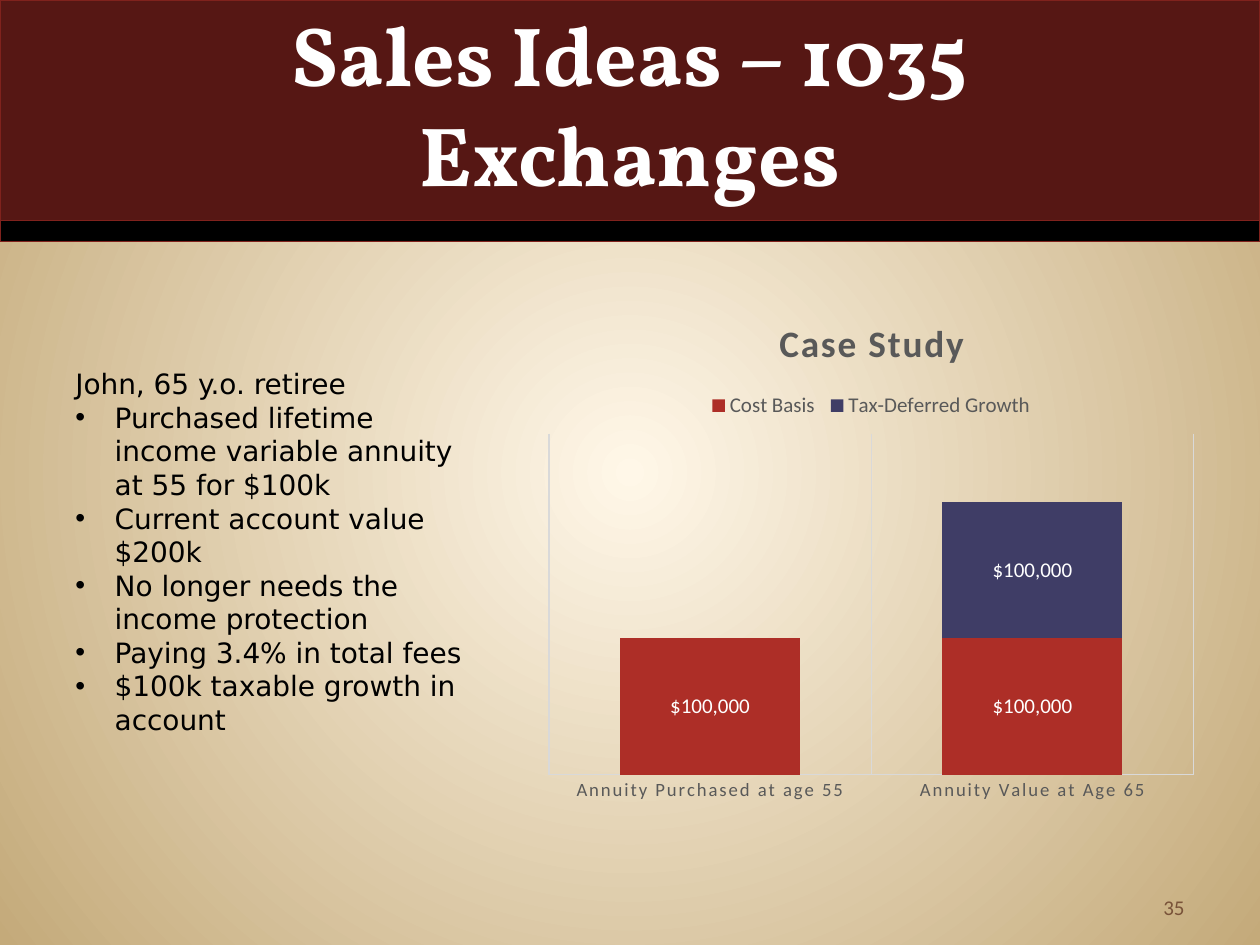
from lxml import etree
from pptx import Presentation
from pptx.chart.data import CategoryChartData
from pptx.dml.color import RGBColor
from pptx.enum.chart import XL_CHART_TYPE, XL_LABEL_POSITION, XL_LEGEND_POSITION, XL_TICK_MARK
from pptx.enum.shapes import MSO_SHAPE
from pptx.enum.text import MSO_ANCHOR, PP_ALIGN
from pptx.oxml import parse_xml
from pptx.oxml.ns import nsdecls, qn
from pptx.util import Pt

COLUMN_STACKED = XL_CHART_TYPE.COLUMN_STACKED
LABEL_CENTER = XL_LABEL_POSITION.CENTER
LEGEND_TOP = XL_LEGEND_POSITION.TOP
TICK_NONE = XL_TICK_MARK.NONE
RECTANGLE = MSO_SHAPE.RECTANGLE
TOP, BOTTOM = MSO_ANCHOR.TOP, MSO_ANCHOR.BOTTOM
LEFT, CENTER, RIGHT = PP_ALIGN.LEFT, PP_ALIGN.CENTER, PP_ALIGN.RIGHT

BLACK = RGBColor(0x00, 0x00, 0x00)
WHITE = RGBColor(0xFF, 0xFF, 0xFF)
CREAM = RGBColor(0xFF, 0xF7, 0xE8)
TAN = RGBColor(0xC4, 0xAA, 0x7A)
MAROON = RGBColor(0x56, 0x17, 0x14)
BAND_EDGE = RGBColor(0x80, 0x22, 0x1D)
BROWN = RGBColor(0x79, 0x53, 0x39)
GRAY = RGBColor(0x59, 0x59, 0x59)
LIGHT_GRAY = RGBColor(0xD9, 0xD9, 0xD9)
RED = RGBColor(0xAD, 0x2E, 0x27)
INDIGO = RGBColor(0x3F, 0x3D, 0x66)

DOLLARS = '"$"#,##0'
LETTER_SPACING = "120"
BULLET_INDENT = Pt(22.5)
CASE_FACTS = [
    "Purchased lifetime income variable annuity at 55 for $100k",
    "Current account value $200k",
    "No longer needs the income protection",
    "Paying 3.4% in total fees",
    "$100k taxable growth in account",
]
CATEGORIES = ["Annuity Purchased at age 55", "Annuity Value at Age 65"]
SERIES = [
    ("Cost Basis", (100000, 100000), RED),
    ("Tax-Deferred Growth", (None, 100000), INDIGO),
]


def format_font(font, color, **values):
    for name, value in values.items():
        setattr(font, name, value)
    font.color.rgb = color


def format_line(line, color, width):
    line.color.rgb = color
    line.width = Pt(width)


def set_background(slide):
    """Radial gradient, light in the middle of the slide."""
    fill = slide.background.fill
    fill.gradient()
    for stop, color, position in zip(fill.gradient_stops, (CREAM, TAN), (0, 1)):
        stop.color.rgb = color
        stop.position = position
    gradient = slide.element.xpath(".//p:bg//a:gradFill")[0]
    linear = gradient.find(qn("a:lin"))
    circle = etree.Element(qn("a:path"), path="circle")
    etree.SubElement(circle, qn("a:fillToRect"), l="50000", t="50000", r="50000", b="50000")
    gradient.replace(linear, circle)


def add_band(slide, top, height, color):
    shape = slide.shapes.add_shape(RECTANGLE, 0, Pt(top), Pt(720), Pt(height))
    shape.shadow.inherit = False
    shape.fill.solid()
    shape.fill.fore_color.rgb = color
    format_line(shape.line, BAND_EDGE, 1)


def add_text(slide, box, lines, color, anchor, alignment, **font_values):
    """Add a text box and return its paragraphs."""
    frame = slide.shapes.add_textbox(*map(Pt, box)).text_frame
    frame.word_wrap = True
    frame.vertical_anchor = anchor
    frame.text = "\n".join(lines)
    for paragraph in frame.paragraphs:
        paragraph.alignment = alignment
        format_font(paragraph.runs[0].font, color, **font_values)
    return frame.paragraphs


def add_bullet(paragraph):
    properties = paragraph._p.get_or_add_pPr()
    properties.set("marL", str(BULLET_INDENT))
    properties.set("indent", str(-BULLET_INDENT))
    etree.SubElement(properties, qn("a:buFont"), typeface="Arial")
    etree.SubElement(properties, qn("a:buChar"), char="•")


def place_chart_part(chart, tag, index, **percents):
    """Give a chart part a fixed place, in percent of the chart area."""
    part = chart.element.xpath(f".//{tag}")[0]
    for layout in part.findall(qn("c:layout")):
        part.remove(layout)
    target = '<c:layoutTarget val="inner"/>' if tag == "c:plotArea" else ""
    modes = "".join(f'<c:{name}Mode val="edge"/>' for name in "xy")
    values = "".join(f'<c:{name} val="{value / 100:.3f}"/>' for name, value in percents.items())
    part.insert(index, parse_xml(
        f"<c:layout {nsdecls('c')}><c:manualLayout>{target}{modes}{values}"
        "</c:manualLayout></c:layout>"))


def format_axes(chart):
    chart.value_axis.minimum_scale = 0
    chart.value_axis.maximum_scale = 250000
    chart.value_axis.has_major_gridlines = False
    chart.value_axis.visible = False
    axis = chart.category_axis
    axis.major_tick_mark = axis.minor_tick_mark = TICK_NONE
    axis.has_major_gridlines = True
    for line in (axis.format.line, axis.major_gridlines.format.line):
        format_line(line, LIGHT_GRAY, 0.75)
    format_font(axis.tick_labels.font, GRAY, size=Pt(10.64), name="Calibri")
    chart.element.xpath(".//c:catAx//a:defRPr")[0].set("spc", LETTER_SPACING)


def format_series(plot):
    plot.gap_width = 79
    plot.overlap = 100
    plot.vary_by_categories = False
    for series, (_, _, color) in zip(plot.series, SERIES):
        series.format.fill.solid()
        series.format.fill.fore_color.rgb = color
        labels = series.data_labels
        label_values = {
            "show_value": True,
            "position": LABEL_CENTER,
            "number_format": DOLLARS,
            "number_format_is_linked": False,
        }
        for name, value in label_values.items():
            setattr(labels, name, value)
        format_font(labels.font, WHITE, size=Pt(12), name="Calibri")


def add_case_chart(slide):
    data = CategoryChartData()
    data.categories = CATEGORIES
    for name, values, _ in SERIES:
        data.add_series(name, values)
    chart = slide.shapes.add_chart(
        COLUMN_STACKED, Pt(306), Pt(167.76), Pt(383.76), Pt(296.64), data).chart
    format_font(chart.font, BLACK, size=Pt(10), name="Calibri")

    chart.has_title = True
    title = chart.chart_title
    title.include_in_layout = False
    title.text_frame.text = "Case Study"
    font = title.text_frame.paragraphs[0].runs[0].font
    format_font(font, GRAY, size=Pt(21.28), bold=True, name="Calibri")
    chart.element.xpath(".//c:title//a:r/a:rPr")[0].set("spc", LETTER_SPACING)

    chart.has_legend = True
    chart.legend.position = LEGEND_TOP
    chart.legend.include_in_layout = False
    format_font(chart.legend.font, GRAY, size=Pt(12), name="Calibri")

    format_axes(chart)
    format_series(chart.plots[0])
    place_chart_part(chart, "c:title", 1, x=35.3, y=3.4)
    place_chart_part(chart, "c:legend", 1, x=25, y=18.2, w=50, h=6.8)
    place_chart_part(chart, "c:plotArea", 0, x=2, y=27, w=96, h=65.7)


def main():
    presentation = Presentation()
    presentation.slide_width, presentation.slide_height = Pt(720), Pt(540)
    slide = presentation.slides.add_slide(presentation.slide_layouts[6])
    set_background(slide)
    add_band(slide, 120, 18, BLACK)
    add_band(slide, 0, 126, MAROON)
    add_text(slide, (516, 491.5, 168, 37.5), ["35"], BROWN, BOTTOM, RIGHT,
             size=Pt(12), name="Calibri")
    add_text(slide, (36, 6, 648, 114), ["Sales Ideas – 1035 Exchanges"], WHITE, BOTTOM, CENTER,
             size=Pt(48), name="Vollkorn", bold=True)
    add_case_chart(slide)
    paragraphs = add_text(slide, (36, 206, 246, 220), ["John, 65 y.o. retiree", *CASE_FACTS],
                          BLACK, TOP, LEFT, size=Pt(16), name="DejaVu Sans")
    for paragraph in paragraphs:
        paragraph.line_spacing = Pt(19.2)
    for paragraph in paragraphs[1:]:
        add_bullet(paragraph)
    presentation.save("out.pptx")


if __name__ == "__main__":
    main()
